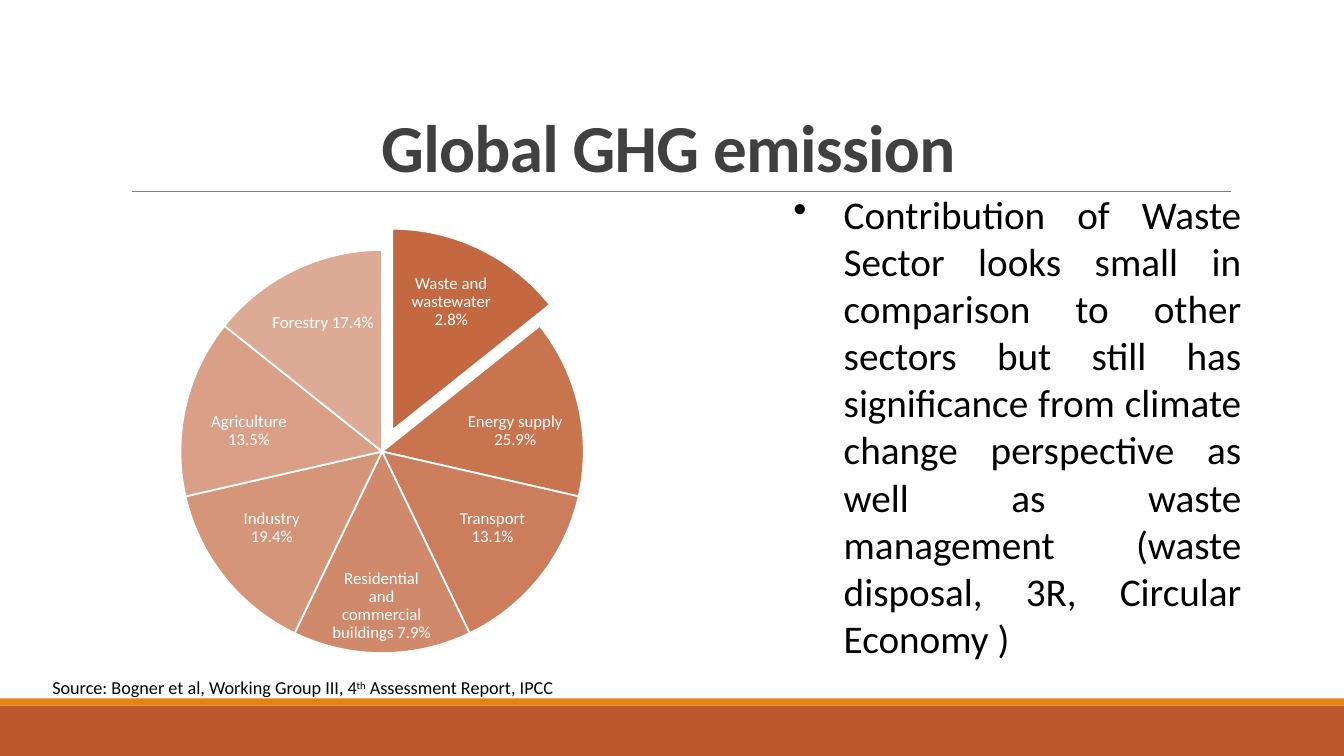
import dataclasses

import lxml.etree
import pptx
import pptx.dml.color
import pptx.enum.shapes
import pptx.enum.text
import pptx.oxml.ns
import pptx.util

Inches = pptx.util.Inches
Align = pptx.enum.text.PP_ALIGN
Anchor = pptx.enum.text.MSO_ANCHOR
Shape = pptx.enum.shapes.MSO_SHAPE
qn = pptx.oxml.ns.qn


@dataclasses.dataclass(frozen=True)
class Theme:
    font: str = "Calibri"
    rust: str = "BD582C"
    orange: str = "E48312"
    rule: str = "808080"
    heading: str = "404040"
    text: str = "000000"
    white: str = "FFFFFF"
    title_size: float = 48
    body_size: float = 28
    source_size: float = 13
    label_size: float = 12


def rgb(value):
    return pptx.dml.color.RGBColor.from_string(value)


def lengths(values):
    return [Inches(value) for value in values]


class SlideBuilder:
    """Draws styled elements on one slide."""

    def __init__(self, page, theme):
        self.page = page
        self.theme = theme

    def style(self, para, size, color, align=Align.LEFT):
        para.alignment = align
        para.font.name = self.theme.font
        para.font.size = pptx.util.Pt(size)
        para.font.color.rgb = rgb(color)

    def title(self, text, bounds):
        box = self.page.shapes.title
        box.left, box.top, box.width, box.height = lengths(bounds)
        frame = box.text_frame
        frame.auto_size = pptx.enum.text.MSO_AUTO_SIZE.NONE
        frame.vertical_anchor = Anchor.BOTTOM
        para = frame.paragraphs[0]
        self.style(para, self.theme.title_size, self.theme.heading, Align.CENTER)
        para.font.bold = True
        para.line_spacing = 0.85
        span = para.add_run()
        span.text = text
        span._r.get_or_add_rPr().set("spc", "-50")

    def bar(self, bounds, color):
        bar = self.page.shapes.add_shape(Shape.RECTANGLE, *lengths(bounds))
        bar.shadow.inherit = False
        bar.fill.solid()
        bar.fill.fore_color.rgb = rgb(color)
        bar.line.fill.background()

    def rule(self, left, right, top):
        line = self.page.shapes.add_connector(
            pptx.enum.shapes.MSO_CONNECTOR.STRAIGHT, *lengths((left, top, right, top)))
        line.line.color.rgb = rgb(self.theme.rule)
        line.line.width = pptx.util.Pt(0.5)
        lxml.etree.SubElement(line._element.spPr, qn("a:effectLst"))

    def text(self, bounds, size, color, align=Align.LEFT, shapes=None):
        box = (shapes or self.page.shapes).add_textbox(*lengths(bounds))
        box.text_frame.word_wrap = True
        para = box.text_frame.paragraphs[0]
        self.style(para, size, color, align)
        return box.text_frame, para

    def source(self, bounds, before, raised, after):
        frame, para = self.text(bounds, self.theme.source_size, self.theme.text)
        frame.auto_size = pptx.enum.text.MSO_AUTO_SIZE.SHAPE_TO_FIT_TEXT
        for part in (before, raised, after):
            span = para.add_run()
            span.text = part
            if part == raised:
                span._r.get_or_add_rPr().set("baseline", "30000")

    def bullet(self, text, bounds):
        frame, para = self.text(bounds, self.theme.body_size, self.theme.text, Align.JUSTIFY)
        frame.auto_size = pptx.enum.text.MSO_AUTO_SIZE.SHAPE_TO_FIT_TEXT
        para.add_run().text = text
        properties = para._p.get_or_add_pPr()
        properties.set("marL", str(Inches(0.5)))
        properties.set("indent", str(-Inches(0.5)))
        mark = properties.makeelement(qn("a:buChar"), {"char": "•"})
        properties.find(qn("a:defRPr")).addprevious(mark)

    def sector(self, shapes, bounds, start, end, opacity):
        sector = shapes.add_shape(Shape.PIE, *lengths(bounds))
        sector.adjustments[0] = start * 0.6
        sector.adjustments[1] = end * 0.6
        sector.shadow.inherit = False
        sector.fill.solid()
        sector.fill.fore_color.rgb = rgb(self.theme.rust)
        color = sector._element.spPr.find(qn("a:solidFill")).find(qn("a:srgbClr"))
        lxml.etree.SubElement(color, qn("a:alpha"), val=str(round(opacity * 1000)))
        sector.line.color.rgb = rgb(self.theme.white)
        sector.line.width = pptx.util.Pt(1.25)

    def label(self, shapes, text, bounds):
        frame, para = self.text(
            bounds, self.theme.label_size, self.theme.white, Align.CENTER, shapes)
        frame.vertical_anchor = Anchor.MIDDLE
        frame.margin_left = frame.margin_right = Inches(0.02)
        frame.margin_top = frame.margin_bottom = Inches(0.02)
        para.line_spacing = 0.9
        para.space_after = pptx.util.Pt(4.2)
        para.add_run().text = text

    def pie(self, sectors, center, pulled_center, diameter):
        shapes = self.page.shapes.add_group_shape().shapes
        sweep = 360 / len(sectors)
        for index, (text, bounds) in enumerate(sectors):
            x, y = center if index else pulled_center
            circle = (x - diameter / 2, y - diameter / 2, diameter, diameter)
            start = (270 + index * sweep) % 360
            end = (270 + (index + 1) * sweep) % 360
            opacity = 90 - 40 * index / (len(sectors) - 1)
            self.sector(shapes, circle, start, end, opacity)
            self.label(shapes, text, bounds)


SECTORS = [
    ("Waste and wastewater 2.8%", (3.93, 2.65, 1.09, 0.69)),
    ("Energy supply 25.9%", (4.53, 3.91, 1.16, 0.74)),
    ("Transport 13.1%", (4.36, 4.86, 1.05, 0.76)),
    ("Residential and commercial buildings 7.9%", (3.25, 5.63, 1.07, 0.76)),
    ("Industry 19.4%", (2.17, 4.86, 1.05, 0.76)),
    ("Agriculture 13.5%", (1.89, 3.91, 1.16, 0.74)),
    ("Forestry 17.4%", (2.66, 2.86, 1.09, 0.69)),
]


def main():
    deck = pptx.Presentation()
    deck.slide_width, deck.slide_height = lengths((13.33, 7.5))
    theme = Theme()
    slide = SlideBuilder(deck.slides.add_slide(deck.slide_layouts[5]), theme)
    slide.bar((0, 7, 13.33, 0.5), theme.rust)
    slide.bar((0, 6.93, 13.33, 0.07), theme.orange)
    slide.rule(1.31, 12.21, 1.9)
    slide.title("Global GHG emission ", (1.2, 0.31, 11, 1.59))
    slide.pie(SECTORS, center=(3.79, 4.48), pulled_center=(3.89, 4.27), diameter=4)
    slide.source((0.42, 6.66, 5.31, 0.32),
                 "Source: Bogner et al, Working Group III, 4", "th",
                 " Assessment Report, IPCC")
    slide.bullet("Contribution of Waste Sector looks small in comparison to other sectors "
                 "but still has significance from climate change perspective as well as "
                 "waste management (waste disposal, 3R, Circular Economy )",
                 (7.77, 1.84, 4.64, 4.81))
    deck.save("out.pptx")


if __name__ == "__main__":
    main()
